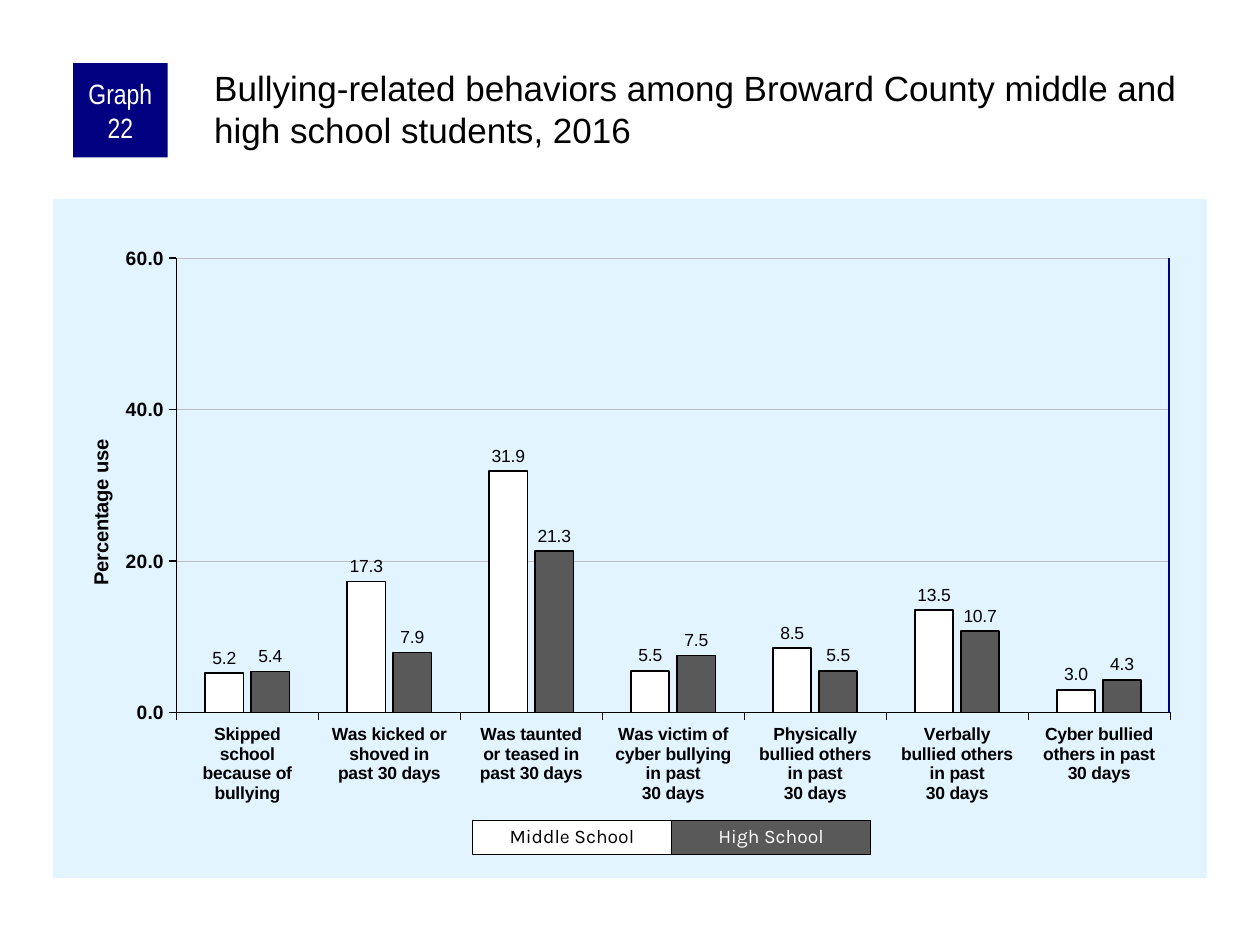
from lxml import etree
from pptx import Presentation
from pptx.chart.data import CategoryChartData
from pptx.dml.color import RGBColor
from pptx.enum.chart import XL_CHART_TYPE, XL_LABEL_POSITION, XL_TICK_MARK
from pptx.enum.shapes import MSO_CONNECTOR, MSO_SHAPE
from pptx.enum.text import MSO_ANCHOR, MSO_AUTO_SIZE, PP_ALIGN
from pptx.oxml import parse_xml
from pptx.oxml.ns import nsdecls, qn
from pptx.util import Inches, Pt

COLUMNS = XL_CHART_TYPE.COLUMN_CLUSTERED
OUTSIDE_END = XL_LABEL_POSITION.OUTSIDE_END
TICK_OUT = XL_TICK_MARK.OUTSIDE
RECT = MSO_SHAPE.RECTANGLE
STRAIGHT = MSO_CONNECTOR.STRAIGHT
TOP, MIDDLE = MSO_ANCHOR.TOP, MSO_ANCHOR.MIDDLE
LEFT, CENTER = PP_ALIGN.LEFT, PP_ALIGN.CENTER

COLORS = {"navy": "000080", "panel": "E1F4FF", "grid": "C0C0C0",
          "gray": "595959", "white": "FFFFFF", "black": "000000"}
RGB = {name: RGBColor.from_string(value) for name, value in COLORS.items()}


def write(shape, text, size, font="Arial", color="black", align=CENTER,
          anchor=MIDDLE, insets=(0.05, 0, 0.05, 0), spacing=1.0):
    frame = shape.text_frame
    frame.word_wrap = True
    frame.auto_size = MSO_AUTO_SIZE.NONE
    frame.vertical_anchor = anchor
    (frame.margin_left, frame.margin_top,
     frame.margin_right, frame.margin_bottom) = map(Inches, insets)
    frame.text = text
    paragraph = frame.paragraphs[0]
    paragraph.alignment = align
    paragraph.line_spacing = spacing
    run_font = paragraph.runs[0].font
    run_font.name, run_font.size = font, Pt(size)
    run_font.color.rgb = RGB[color]


def manual_layout(x, y, w=None, h=None):
    tags = [("xMode", "edge"), ("yMode", "edge"), ("x", x), ("y", y)]
    if w:
        tags = [("layoutTarget", "inner")] + tags + [("w", w), ("h", h)]
    body = "".join(f'<c:{tag} val="{value}"/>' for tag, value in tags)
    return parse_xml(f'<c:layout {nsdecls("c")}><c:manualLayout>{body}'
                     '</c:manualLayout></c:layout>')


prs = Presentation()
prs.slide_width, prs.slide_height = Inches(10), Inches(7.5)
slide = prs.slides.add_slide(prs.slide_layouts[5])
shapes = slide.shapes

# Title
title = shapes.title
title.left, title.top = Inches(1.67), Inches(0.5)
title.width, title.height = Inches(7.92), Inches(0.83)
write(title, "Bullying-related behaviors among Broward County middle and "
      "high school students, 2016", 20, align=LEFT, anchor=TOP,
      insets=(0.03, 0.03, 0, 0))

# Chart data
survey = CategoryChartData(number_format="0.0")
survey.categories = [
    "Skipped\nschool\nbecause of\nbullying",
    "Was kicked or\nshoved in\npast 30 days",
    "Was taunted\nor teased in\npast 30 days",
    "Was victim of\ncyber bullying\nin past\n30 days",
    "Physically\nbullied others\nin past\n30 days",
    "Verbally\nbullied others\nin past\n30 days",
    "Cyber bullied\nothers in past\n30 days",
]
survey.add_series("Middle School", [5.2, 17.3, 31.9, 5.5, 8.5, 13.5, 3.0])
survey.add_series("High School", [5.4, 7.9, 21.3, 7.5, 5.5, 10.7, 4.3])

# Chart on its pale panel
chart = shapes.add_chart(COLUMNS, Inches(0.42), Inches(1.58), Inches(9.16),
                         Inches(5.39), survey).chart
chart.has_legend = False
chart.has_title = False
chart.font.name, chart.font.size = "Arial", Pt(11.5)
chart.font.color.rgb = RGB["black"]
chart_xml = chart._chartSpace
chart_xml.find(qn("c:chart")).addnext(parse_xml(
    f'<c:spPr {nsdecls("c", "a")}><a:solidFill><a:srgbClr '
    f'val="{COLORS["panel"]}"/></a:solidFill><a:ln><a:noFill/></a:ln></c:spPr>'))
plot_area = chart_xml.find(".//" + qn("c:plotArea"))
for layout in plot_area.findall(qn("c:layout")):
    plot_area.remove(layout)
plot_area.insert(0, manual_layout(0.107, 0.087, 0.861, 0.669))

# Axes
behaviors, percent = chart.category_axis, chart.value_axis
for axis, size, width in ((behaviors, 10, 0.25), (percent, 11, 1)):
    axis.major_tick_mark = TICK_OUT
    axis.format.line.color.rgb = RGB["black"]
    axis.format.line.width = Pt(width)
    labels = axis.tick_labels.font
    labels.name, labels.size, labels.bold = "Arial", Pt(size), True
    labels.color.rgb = RGB["black"]
percent.minimum_scale, percent.maximum_scale, percent.major_unit = 0, 60, 20
percent.tick_labels.number_format = "0.0"
percent.tick_labels.number_format_is_linked = False
percent.major_gridlines.format.line.color.rgb = RGB["grid"]
percent.major_gridlines.format.line.width = Pt(0.25)
percent.axis_title.text_frame.text = "Percentage use"
caption = percent.axis_title.text_frame.paragraphs[0].runs[0].font
caption.name, caption.size, caption.bold = "Arial", Pt(11.5), True
caption.color.rgb = RGB["black"]
caption_xml = percent.axis_title._element
for layout in caption_xml.findall(qn("c:layout")):
    caption_xml.remove(layout)
caption_xml.find(qn("c:tx")).addnext(manual_layout(0.027, 0.349))

# Columns and their values
columns = chart.plots[0]
columns.gap_width, columns.overlap = 150, -20
columns.vary_by_categories = False
for series, fill in zip(columns.series, ("white", "gray")):
    series.invert_if_negative = False
    series.format.fill.solid()
    series.format.fill.fore_color.rgb = RGB[fill]
    series.format.line.color.rgb = RGB["black"]
    series.format.line.width = Pt(1)
    values = series.data_labels
    values.show_value = True
    values.position = OUTSIDE_END
    values.number_format, values.number_format_is_linked = "0.0", False
    values.font.name, values.font.size = "Arial", Pt(10)
    values.font.color.rgb = RGB["black"]

# Right edge of the plot
right_edge = shapes.add_connector(STRAIGHT, Inches(9.28), Inches(2.05),
                                  Inches(9.28), Inches(5.66))
right_edge.line.color.rgb = RGB["navy"]
right_edge.line.width = Pt(1)
etree.SubElement(right_edge._element.spPr, qn("a:effectLst"))

# Graph number and legend boxes
boxes = [
    ("Graph 22", (0.58, 0.5, 0.75, 0.75), "navy", None,
     dict(size=16, font="Arial Narrow", color="white")),
    ("Middle School", (3.75, 6.51, 1.58, 0.27), "white", "black",
     dict(size=11, font="Karla", spacing=0.9)),
    ("High School", (5.33, 6.51, 1.58, 0.27), "gray", "black",
     dict(size=11, font="Karla", color="white", spacing=0.9)),
]
for text, place, fill, outline, style in boxes:
    box = shapes.add_shape(RECT, *map(Inches, place))
    box.shadow.inherit = False
    box.fill.solid()
    box.fill.fore_color.rgb = RGB[fill]
    if outline:
        box.line.color.rgb = RGB[outline]
        box.line.width = Pt(0.75)
    else:
        box.line.fill.background()
    write(box, text, **style)

prs.save("out.pptx")
